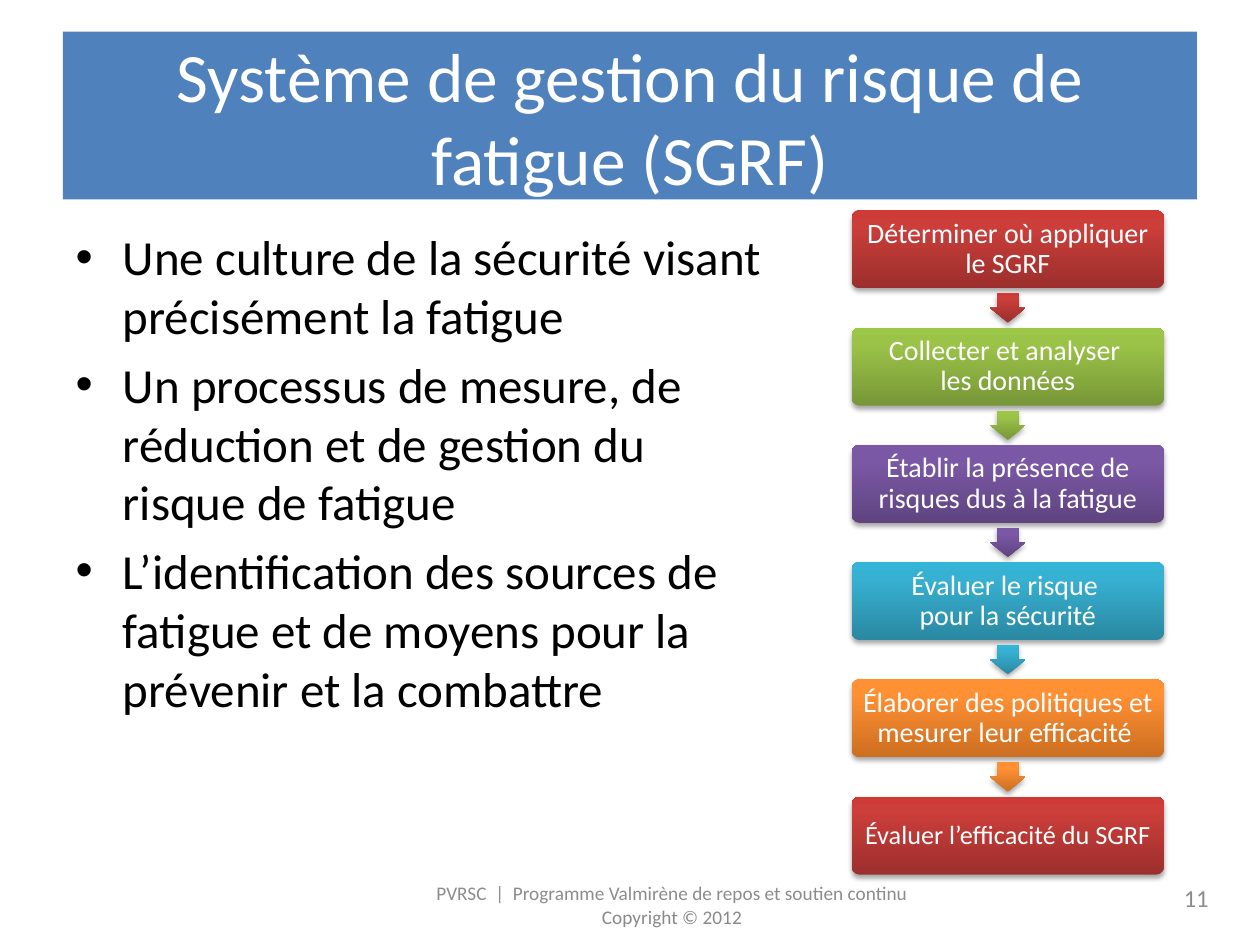
from dataclasses import dataclass

from lxml.etree import SubElement
from pptx import Presentation
from pptx.dml.color import RGBColor
from pptx.enum.shapes import MSO_SHAPE as Shape
from pptx.enum.text import MSO_ANCHOR as Anchor, MSO_AUTO_SIZE as AutoSize, PP_ALIGN as Align
from pptx.oxml import parse_xml
from pptx.oxml.ns import nsdecls, qn
from pptx.util import Pt


@dataclass(frozen=True)
class Theme:
    font: str = "Calibri"
    band: str = "4F81BD"
    light: str = "FFFFFF"
    dark: str = "000000"
    muted: str = "8C8C8C"
    copyright: str = "898989"
    red: tuple = ("9C2F2D", "CB3E3A", "CE3B37")
    green: tuple = ("779737", "9BC348", "9DC746")
    purple: tuple = ("5F4480", "7B58A6", "7C57A8")
    blue: tuple = ("2A88A2", "37B1D2", "34B4D6")
    orange: tuple = ("CC6E20", "FF9034", "FF9136")
    title_size: float = 39.6
    body_size: float = 28
    step_size: float = 16
    last_step_size: float = 15
    footer_size: float = 11
    number_size: float = 14


THEME = Theme()

TITLE = "Système de gestion du risque de fatigue (SGRF)"
POINTS = [
    "Une culture de la sécurité visant précisément la fatigue",
    "Un processus de mesure, de réduction et de gestion du risque de fatigue",
    "L’identification des sources de fatigue et de moyens pour la prévenir et la combattre",
]
STEPS = [
    ("Déterminer où appliquer le SGRF", THEME.red),
    ("Collecter et analyser \nles données", THEME.green),
    ("Établir la présence de risques dus à la fatigue", THEME.purple),
    ("Évaluer le risque \npour la sécurité", THEME.blue),
    ("Élaborer des politiques et mesurer leur efficacité ", THEME.orange),
    ("Évaluer l’efficacité du SGRF", THEME.red),
]
FOOTER = [
    ("PVRSC  |  Programme Valmirène de repos et soutien continu", THEME.muted),
    ("Copyright © 2012", THEME.copyright),
]


def place(part, box):
    part.left, part.top, part.width, part.height = (Pt(length) for length in box)


def add_run(paragraph, text, size, color):
    run = paragraph.add_run()
    run.text = text
    run.font.name = THEME.font
    run.font.size = Pt(size)
    run.font.color.rgb = RGBColor.from_string(color)


def write_lines(frame, lines, size, align=None):
    for index, (text, color) in enumerate(lines):
        paragraph = frame.add_paragraph() if index else frame.paragraphs[0]
        paragraph.alignment = align
        add_run(paragraph, text, size, color)


def add_plain_shape(slide, preset, box):
    part = slide.shapes.add_shape(preset, *(Pt(length) for length in box))
    part.line.fill.background()
    part.shadow.inherit = False
    return part


def shade(part, colors):
    stops = "".join(
        f'<a:gs pos="{position}"><a:srgbClr val="{color}"/></a:gs>'
        for position, color in zip((0, 80000, 100000), colors)
    )
    gradient = parse_xml(
        f'<a:gradFill {nsdecls("a")} rotWithShape="0"><a:gsLst>{stops}</a:gsLst>'
        '<a:lin ang="16200000" scaled="0"/></a:gradFill>'
    )
    part.fill.background()
    properties = part.element.spPr
    properties.replace(properties.find(qn("a:noFill")), gradient)
    shadow = SubElement(
        properties.find(qn("a:effectLst")), qn("a:outerShdw"),
        blurRad=str(Pt(3.1)), dist=str(Pt(1.8)), dir="5400000", rotWithShape="0",
    )
    tint = SubElement(shadow, qn("a:srgbClr"), val=THEME.dark)
    SubElement(tint, qn("a:alpha"), val="35000")


def add_title(slide, box):
    left, top, width, height = box
    band = add_plain_shape(slide, Shape.RECTANGLE, box)
    band.fill.solid()
    band.fill.fore_color.rgb = RGBColor.from_string(THEME.band)
    slide.shapes.element.insert(2, band.element)
    title = slide.shapes.title
    place(title, (left, top + 3.6, width, height - 6))
    frame = title.text_frame
    frame.auto_size = AutoSize.NONE
    frame.vertical_anchor = Anchor.MIDDLE
    write_lines(frame, [(TITLE, THEME.light)], THEME.title_size, Align.CENTER)


def add_points(slide, box):
    body = slide.placeholders[1]
    place(body, box)
    body.text_frame.auto_size = AutoSize.NONE
    write_lines(body.text_frame, [(point, THEME.dark) for point in POINTS], THEME.body_size)


def add_step(slide, box, text, colors, size):
    step = add_plain_shape(slide, Shape.ROUNDED_RECTANGLE, box)
    step.adjustments[0] = 0.1
    shade(step, colors)
    frame = step.text_frame
    frame.word_wrap = True
    frame.vertical_anchor = Anchor.MIDDLE
    frame.margin_left = frame.margin_right = Pt(3.7)
    frame.margin_top = frame.margin_bottom = Pt(3.7)
    paragraph = frame.paragraphs[0]
    paragraph.alignment = Align.CENTER
    paragraph.line_spacing = 0.9
    for index, line in enumerate(text.split("\n")):
        if index:
            paragraph.add_line_break()
        add_run(paragraph, line, size, THEME.light)


def add_arrow(slide, center_x, center_y, colors):
    length, breadth = 16.7, 20.1
    box = (center_x - length / 2, center_y - breadth / 2, length, breadth)
    arrow = add_plain_shape(slide, Shape.RIGHT_ARROW, box)
    arrow.rotation = 90
    arrow.adjustments[0] = 0.6
    arrow.adjustments[1] = 0.5
    shade(arrow, colors)


def add_process(slide, box):
    left, top, width, height = box
    step_height = 44.6
    last = len(STEPS) - 1
    pitch = (height - step_height) / last
    for index, (text, colors) in enumerate(STEPS):
        step_top = top + index * pitch
        size = THEME.last_step_size if index == last else THEME.step_size
        add_step(slide, (left, step_top, width, step_height), text, colors, size)
        if index < last:
            gap_middle = step_top + (step_height + pitch) / 2
            add_arrow(slide, left + width / 2, gap_middle, colors)


def add_note(slide, box, lines, size, align):
    note = slide.shapes.add_textbox(*(Pt(length) for length in box))
    frame = note.text_frame
    frame.word_wrap = True
    frame.vertical_anchor = Anchor.MIDDLE
    write_lines(frame, lines, size, align)


def main():
    deck = Presentation()
    deck.slide_width, deck.slide_height = Pt(720), Pt(540)
    slide = deck.slides.add_slide(deck.slide_layouts[1])
    add_title(slide, (36, 18, 648, 96))
    add_points(slide, (36, 126, 414, 356.4))
    add_process(slide, (486.6, 120.2, 178.6, 379.6))
    add_note(slide, (216, 503.3, 336, 27.4), FOOTER, THEME.footer_size, Align.CENTER)
    add_note(slide, (529.7, 498.2, 168, 29), [("11", THEME.muted)], THEME.number_size, Align.RIGHT)
    deck.save("out.pptx")


if __name__ == "__main__":
    main()
